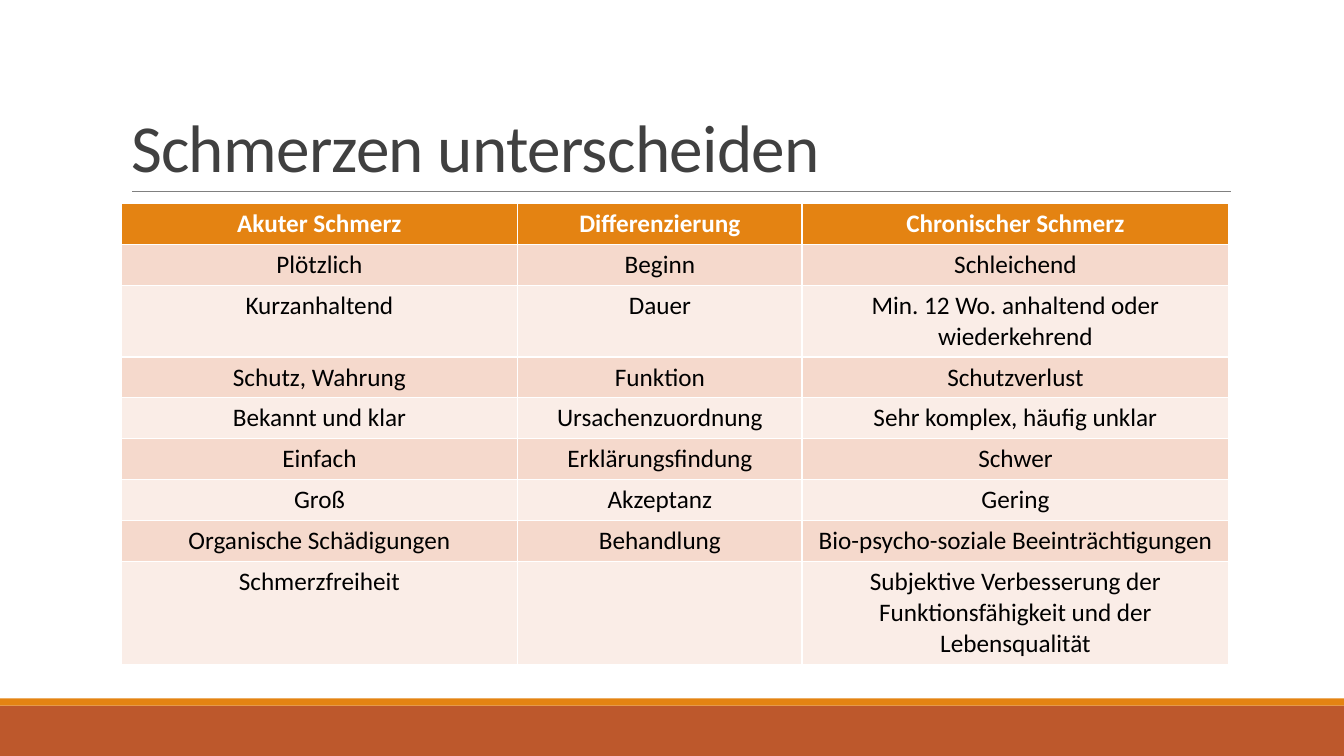
from dataclasses import dataclass

from lxml.etree import SubElement
from pptx import Presentation
from pptx.dml.color import RGBColor
from pptx.enum.shapes import MSO_CONNECTOR, MSO_SHAPE
from pptx.enum.text import MSO_ANCHOR, MSO_AUTO_SIZE, PP_ALIGN
from pptx.oxml.ns import qn
from pptx.util import Cm, Pt


@dataclass(frozen=True)
class Theme:
    font: str = "Calibri"
    title_size: int = 48
    table_size: int = 18
    title: str = "404040"
    rule: str = "808080"
    orange: str = "E48312"
    rust: str = "BD582C"
    header_text: str = "FFFFFF"
    body_text: str = "000000"
    bands: tuple = ("F5D9CC", "FAEDE7")


THEME = Theme()
WIDTH, HEIGHT = 33.87, 19.05
LEFT = 3.05

COLUMN_WIDTHS = (10.0, 7.16, 10.76)
ROW_HEIGHTS = (1,) * 7 + (1.04, 2.44)
ROWS = (
    ("Akuter Schmerz", "Differenzierung", "Chronischer Schmerz"),
    ("Plötzlich", "Beginn", "Schleichend"),
    ("Kurzanhaltend", "Dauer", "Min. 12 Wo. anhaltend oder wiederkehrend"),
    ("Schutz, Wahrung", "Funktion", "Schutzverlust"),
    ("Bekannt und klar", "Ursachenzuordnung", "Sehr komplex, häufig unklar"),
    ("Einfach", "Erklärungsfindung", "Schwer"),
    ("Groß", "Akzeptanz", "Gering"),
    ("Organische Schädigungen", "Behandlung", "Bio-psycho-soziale Beeinträchtigungen"),
    ("Schmerzfreiheit", "",
     "Subjektive Verbesserung der Funktionsfähigkeit und der Lebensqualität"),
)


def paint(fill, color):
    fill.solid()
    fill.fore_color.rgb = RGBColor.from_string(color)


def set_font(font, size, color, bold=False):
    font.name = THEME.font
    font.size = Pt(size)
    font.bold = bold
    font.color.rgb = RGBColor.from_string(color)


def add_band(s, top, height, color):
    band = s.shapes.add_shape(MSO_SHAPE.RECTANGLE, 0, Cm(top), Cm(WIDTH), Cm(height))
    band.shadow.inherit = False
    paint(band.fill, color)
    band.line.fill.background()


def add_rule(s, left, right, y):
    rule = s.shapes.add_connector(MSO_CONNECTOR.STRAIGHT, Cm(left), Cm(y), Cm(right), Cm(y))
    rule.line.color.rgb = RGBColor.from_string(THEME.rule)
    rule.line.width = Pt(0.5)
    SubElement(rule._element.spPr, qn("a:effectLst"))


def set_title(s, text):
    sp = s.shapes.title
    sp.left, sp.top, sp.width, sp.height = Cm(LEFT), Cm(0.8), Cm(27.94), Cm(4.03)
    tf = sp.text_frame
    tf.text = text
    tf.word_wrap = True
    tf.auto_size = MSO_AUTO_SIZE.NONE
    tf.vertical_anchor = MSO_ANCHOR.BOTTOM
    p = tf.paragraphs[0]
    p.alignment = PP_ALIGN.LEFT
    p.line_spacing = 0.85
    set_font(p.font, THEME.title_size, THEME.title)
    # Letter spacing in hundredths of a point
    p.runs[0]._r.get_or_add_rPr().set("spc", "-50")


def fill_cell(cell, text, fill, color, bold):
    paint(cell.fill, fill)
    cell.text = text
    p = cell.text_frame.paragraphs[0]
    p.alignment = PP_ALIGN.CENTER
    set_font(p.font, THEME.table_size, color, bold)


def add_comparison(s, top):
    frame = s.shapes.add_table(len(ROWS), len(COLUMN_WIDTHS), Cm(LEFT), Cm(top),
                               Cm(sum(COLUMN_WIDTHS)), Cm(sum(ROW_HEIGHTS)))
    table = frame.table
    for column, width in zip(table.columns, COLUMN_WIDTHS):
        column.width = Cm(width)
    for i, (row, height, texts) in enumerate(zip(table.rows, ROW_HEIGHTS, ROWS)):
        row.height = Cm(height)
        header = i == 0
        fill = THEME.orange if header else THEME.bands[(i - 1) % 2]
        color = THEME.header_text if header else THEME.body_text
        for cell, text in zip(row.cells, texts):
            fill_cell(cell, text, fill, color, header)


def main():
    prs = Presentation()
    prs.slide_width, prs.slide_height = Cm(WIDTH), Cm(HEIGHT)
    s = prs.slides.add_slide(prs.slide_layouts[5])

    # Footer bands and title rule
    add_band(s, 17.78, 1.27, THEME.rust)
    add_band(s, 17.6, 0.18, THEME.orange)
    add_rule(s, 3.33, 31.01, 4.83)

    # Title and comparison table
    set_title(s, "Schmerzen unterscheiden")
    add_comparison(s, 5.13)

    prs.save("out.pptx")


if __name__ == "__main__":
    main()
